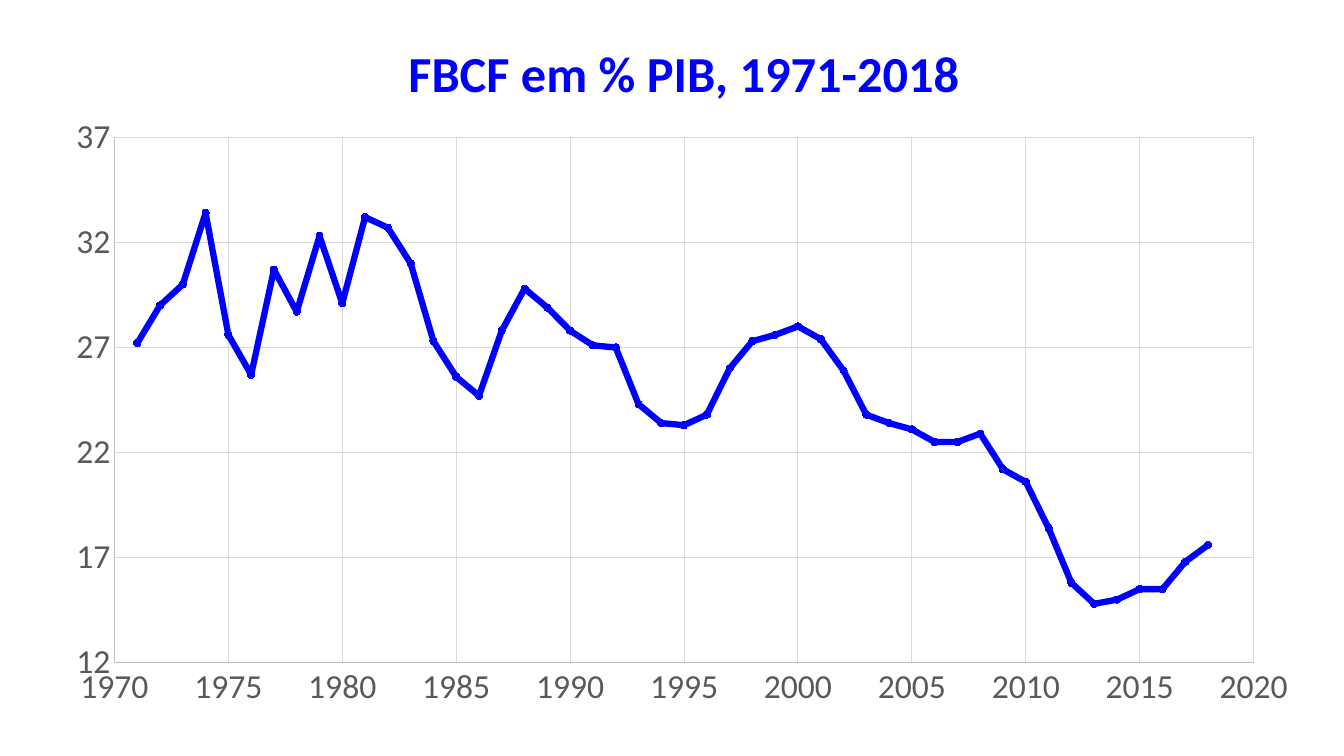
from lxml import etree
from pptx import Presentation
from pptx.chart.data import XyChartData
from pptx.dml.color import RGBColor
from pptx.enum.chart import XL_CHART_TYPE as ChartType, XL_MARKER_STYLE as MarkerStyle
from pptx.enum.chart import XL_TICK_LABEL_POSITION as LabelPosition, XL_TICK_MARK as TickMark
from pptx.oxml.ns import qn
from pptx.util import Inches, Pt

BLUE = RGBColor(0x00, 0x00, 0xFF)
MARKER_BLUE = RGBColor(0x5B, 0x9B, 0xD5)
LABEL_GREY = RGBColor(0x59, 0x59, 0x59)
AXIS_GREY = RGBColor(0xBF, 0xBF, 0xBF)
GRID_GREY = RGBColor(0xD9, 0xD9, 0xD9)

FIRST_YEAR = 1971
INVESTMENT_SHARE = [
    27.2, 29, 30, 33.4, 27.6, 25.7, 30.7, 28.7, 32.3, 29.1,  # 1971-1980
    33.2, 32.7, 31, 27.3, 25.6, 24.7, 27.8, 29.8, 28.9, 27.8,  # 1981-1990
    27.1, 27, 24.3, 23.4, 23.3, 23.8, 26, 27.3, 27.6, 28,  # 1991-2000
    27.4, 25.9, 23.8, 23.4, 23.1, 22.5, 22.5, 22.9, 21.2, 20.6,  # 2001-2010
    18.4, 15.8, 14.8, 15, 15.5, 15.5, 16.8, 17.6,  # 2011-2018
]


class SlideBuilder:
    """Holds the slide and the style shared by its elements."""

    font_name = "Calibri"
    label_size = Pt(24)
    title_size = Pt(36)
    thin_line = Pt(0.75)

    def __init__(self, slide):
        self.slide = slide

    def style_font(self, font, size, color, bold=False):
        font.name = self.font_name
        font.size = size
        font.bold = bold
        font.color.rgb = color

    def style_line(self, line, color, width):
        line.color.rgb = color
        line.width = width

    def add_scatter(self, left, top, width, height, points):
        data = XyChartData()
        series = data.add_series("FBCF em % PIB")
        for x, y in points:
            series.add_data_point(x, y)
        frame = self.slide.shapes.add_chart(
            ChartType.XY_SCATTER_SMOOTH, Inches(left), Inches(top),
            Inches(width), Inches(height), data)
        chart = frame.chart
        chart.has_legend = False
        chart.font.name = self.font_name
        chart.font.size = self.label_size
        chart.plots[0].vary_by_categories = False
        return chart

    def set_title(self, chart, text):
        chart.has_title = True
        chart.chart_title.include_in_layout = False
        paragraph = chart.chart_title.text_frame.paragraphs[0]
        paragraph.text = text
        self.style_font(paragraph.runs[0].font, self.title_size, BLUE, bold=True)

    def style_axis(self, axis, minimum, maximum, step):
        axis.minimum_scale = minimum
        axis.maximum_scale = maximum
        axis.major_unit = step
        axis.major_tick_mark = axis.minor_tick_mark = TickMark.NONE
        axis.tick_label_position = LabelPosition.NEXT_TO_AXIS
        axis.tick_labels.number_format = "General"
        axis.tick_labels.number_format_is_linked = False
        self.style_font(axis.tick_labels.font, self.label_size, LABEL_GREY)
        self.style_line(axis.format.line, AXIS_GREY, self.thin_line)
        axis.has_major_gridlines = True
        self.style_line(axis.major_gridlines.format.line, GRID_GREY, self.thin_line)

    def style_series(self, series):
        series.smooth = True
        self.style_line(series.format.line, BLUE, Pt(4.5))
        marker = series.marker
        marker.style = MarkerStyle.CIRCLE
        marker.size = 5
        marker.format.fill.solid()
        marker.format.fill.fore_color.rgb = MARKER_BLUE
        self.style_line(marker.format.line, BLUE, self.thin_line)

    def place_plot(self, chart, x, y, w, h):
        """Fix the inner plot area, in fractions of the chart."""
        plot_area = chart.plots[0]._element.getparent()
        for layout in plot_area.findall(qn("c:layout")):
            plot_area.remove(layout)
        layout = etree.Element(qn("c:layout"))
        plot_area.insert(0, layout)
        manual = etree.SubElement(layout, qn("c:manualLayout"))
        settings = {"layoutTarget": "inner", "xMode": "edge", "yMode": "edge",
                    "x": x, "y": y, "w": w, "h": h}
        for name, value in settings.items():
            etree.SubElement(manual, qn(f"c:{name}")).set("val", str(value))


def main():
    presentation = Presentation()
    presentation.slide_width = Inches(13.33)
    presentation.slide_height = Inches(7.5)
    slide = presentation.slides.add_slide(presentation.slide_layouts[6])
    builder = SlideBuilder(slide)

    # Chart with one point per year
    chart = builder.add_scatter(0.35, 0.09, 12.87, 7.23,
                                enumerate(INVESTMENT_SHARE, start=FIRST_YEAR))
    builder.set_title(chart, "FBCF em % PIB, 1971-2018")
    builder.place_plot(chart, 0.061, 0.176, 0.878, 0.721)

    # Axes and curve
    builder.style_axis(chart.category_axis, 1970, 2020, 5)
    builder.style_axis(chart.value_axis, 12, 37, 5)
    builder.style_series(chart.plots[0].series[0])

    presentation.save("out.pptx")


if __name__ == "__main__":
    main()
